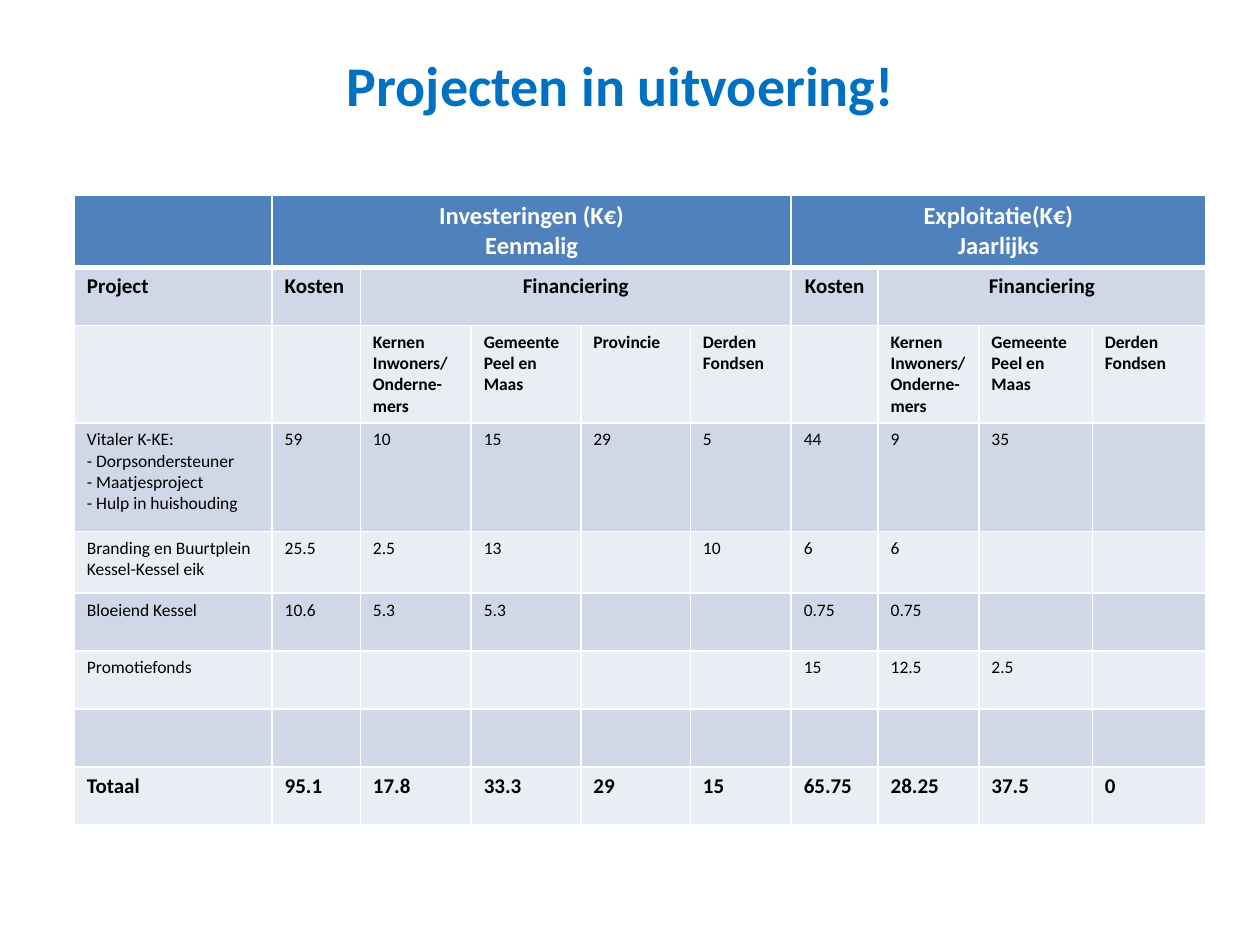
import lxml.etree
import pptx
import pptx.dml.color
import pptx.enum.text
import pptx.oxml.ns
import pptx.util

Inches, Pt = pptx.util.Inches, pptx.util.Pt
ALIGN = pptx.enum.text.PP_ALIGN
ANCHOR = pptx.enum.text.MSO_ANCHOR

COL_WIDTHS = [1.57, 0.7, 0.88, 0.87, 0.87, 0.8, 0.69, 0.8, 0.9, 0.9]
ROW_HEIGHTS = [0.49, 0.46, 0.68, 0.86, 0.49, 0.46, 0.46, 0.46, 0.46]

RESIDENTS = "Kernen\nInwoners/\nOnderne-mers"
MUNICIPALITY = "Gemeente Peel en Maas"
THIRD_PARTIES = "Derden\nFondsen"
PROJECTS = "Vitaler K-KE:\n- Dorpsondersteuner\n- Maatjesproject\n- Hulp in huishouding"

ROWS = [
    ["", "Investeringen (K€)\nEenmalig", "", "", "", "",
     "Exploitatie(K€)\nJaarlijks", "", "", ""],
    ["Project", "Kosten", "Financiering", "", "", "",
     "Kosten", "Financiering", "", ""],
    ["", "", RESIDENTS, MUNICIPALITY, "Provincie", THIRD_PARTIES,
     "", RESIDENTS, MUNICIPALITY, THIRD_PARTIES],
    [PROJECTS, "59", "10", "15", "29", "5", "44", "9", "35", ""],
    ["Branding en Buurtplein\nKessel-Kessel eik", "25.5", "2.5", "13", "", "10",
     "6", "6", "", ""],
    ["Bloeiend Kessel", "10.6", "5.3", "5.3", "", "", "0.75", "0.75", "", ""],
    ["Promotiefonds", "", "", "", "", "", "15", "12.5", "2.5", ""],
    [""] * 10,
    ["Totaal", "95.1", "17.8", "33.3", "29", "15", "65.75", "28.25", "37.5", "0"],
]
# (row, first column, last column)
MERGES = [(0, 1, 5), (0, 6, 9), (1, 2, 5), (1, 7, 9)]
CENTRED = {(0, 1), (0, 6), (1, 2), (1, 6), (1, 7)}


def rgb(value):
    return pptx.dml.color.RGBColor.from_string(value)


class SlideBuilder:
    font = "Calibri"
    title_format = {"size": Pt(32), "bold": True}
    header_format = {"size": Pt(14), "bold": True}
    strong_format = {"size": Pt(12), "bold": True}
    label_format = {"size": Pt(10), "bold": True}
    body_format = {"size": Pt(10), "bold": False}
    blue, white, black = "0070C0", "FFFFFF", "000000"
    header_fill = "4F81BD"
    band_fills = ["E9EDF4", "D0D8E8"]

    def __init__(self, prs):
        self.slide = prs.slides.add_slide(prs.slide_layouts[5])

    def add_text(self, tf, text, fmt, color, align):
        for i, line in enumerate(text.split("\n")):
            p = tf.add_paragraph() if i else tf.paragraphs[0]
            p.alignment = align
            r = p.add_run()
            r.text = line
            r.font.name = self.font
            r.font.color.rgb = rgb(color)
            for name, value in fmt.items():
                setattr(r.font, name, value)

    def title(self, text, left, top, width, height):
        sp = self.slide.shapes.title
        box = {"left": left, "top": top, "width": width, "height": height}
        for name, value in box.items():
            setattr(sp, name, Inches(value))
        sp.text_frame.vertical_anchor = ANCHOR.MIDDLE
        self.add_text(sp.text_frame, text, self.title_format, self.blue, ALIGN.CENTER)

    def borders(self, cell, top, bottom):
        """Draw white cell edges; top and bottom are widths in points."""
        qn = pptx.oxml.ns.qn
        tcPr = cell._tc.get_or_add_tcPr()
        edges = {"a:lnL": 1, "a:lnR": 1, "a:lnT": top, "a:lnB": bottom}
        for i, (tag, width) in enumerate(edges.items()):
            ln = lxml.etree.Element(qn(tag), w=str(int(Pt(width))))
            fill = lxml.etree.SubElement(ln, qn("a:solidFill"))
            lxml.etree.SubElement(fill, qn("a:srgbClr"), val=self.white)
            tcPr.insert(i, ln)

    def row_format(self, row):
        formats = {0: self.header_format, 1: self.strong_format,
                   2: self.label_format, len(ROWS) - 1: self.strong_format}
        return formats.get(row, self.body_format)

    def table(self, left, top):
        table = self.slide.shapes.add_table(
            len(ROWS), len(COL_WIDTHS), Inches(left), Inches(top),
            Inches(sum(COL_WIDTHS)), Inches(sum(ROW_HEIGHTS))).table
        for column, width in zip(table.columns, COL_WIDTHS):
            column.width = Inches(width)
        for row, height in zip(table.rows, ROW_HEIGHTS):
            row.height = Inches(height)
        for row, first, last in MERGES:
            table.cell(row, first).merge(table.cell(row, last))
        for i, texts in enumerate(ROWS):
            for j, text in enumerate(texts):
                cell = table.cell(i, j)
                cell.fill.solid()
                cell.fill.fore_color.rgb = rgb(
                    self.band_fills[i % 2] if i else self.header_fill)
                self.borders(cell, 3 if i == 1 else 1, 3 if i == 0 else 1)
                if text:
                    self.add_text(cell.text_frame, text, self.row_format(i),
                                  self.black if i else self.white,
                                  ALIGN.CENTER if (i, j) in CENTRED else ALIGN.LEFT)


def main():
    prs = pptx.Presentation()
    prs.slide_width, prs.slide_height = Inches(10), Inches(7.5)
    s = SlideBuilder(prs)
    s.title("Projecten in uitvoering!", 0.08, 0.04, 9.69, 1.25)
    s.table(0.59, 1.55)
    prs.save("out.pptx")


if __name__ == "__main__":
    main()
